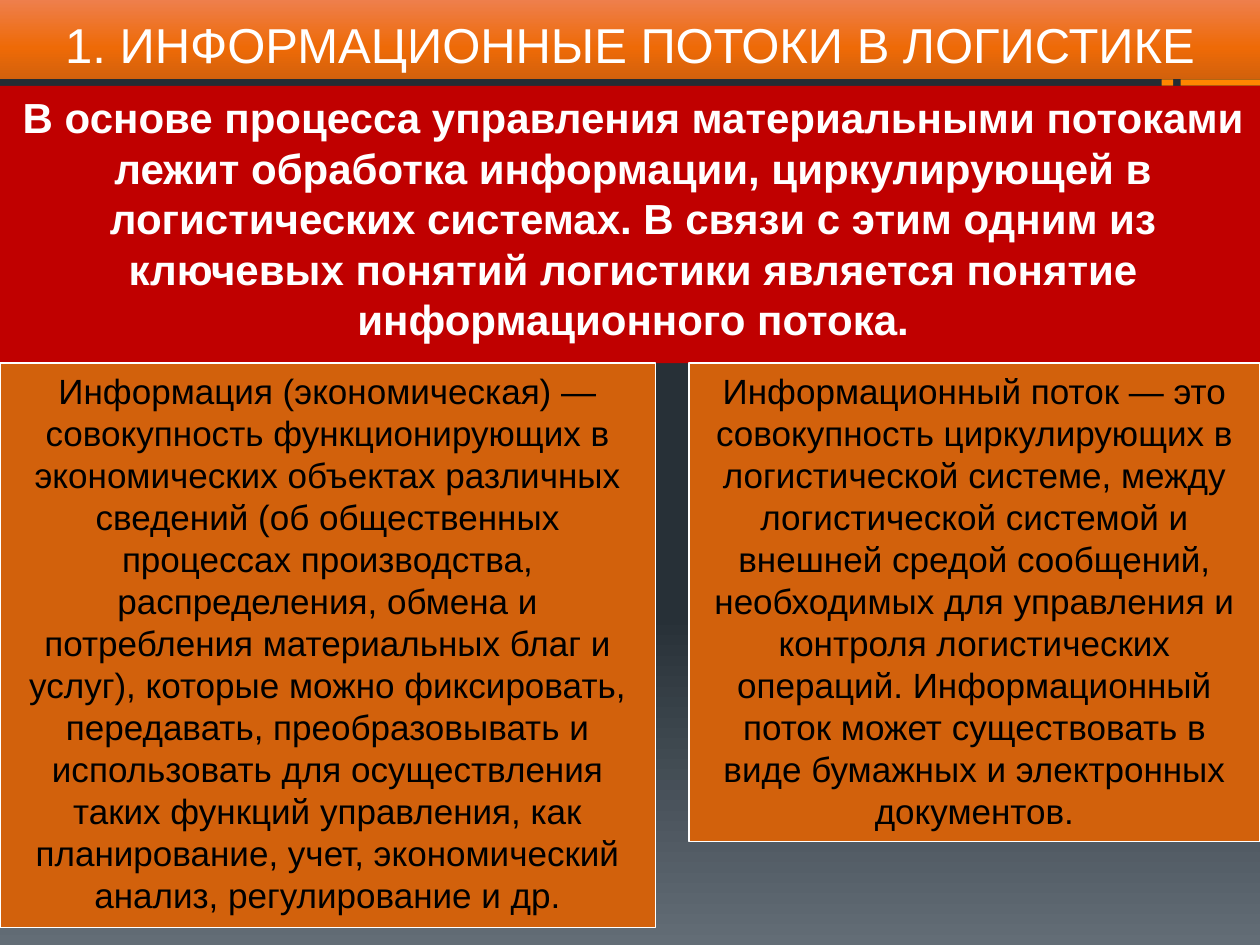
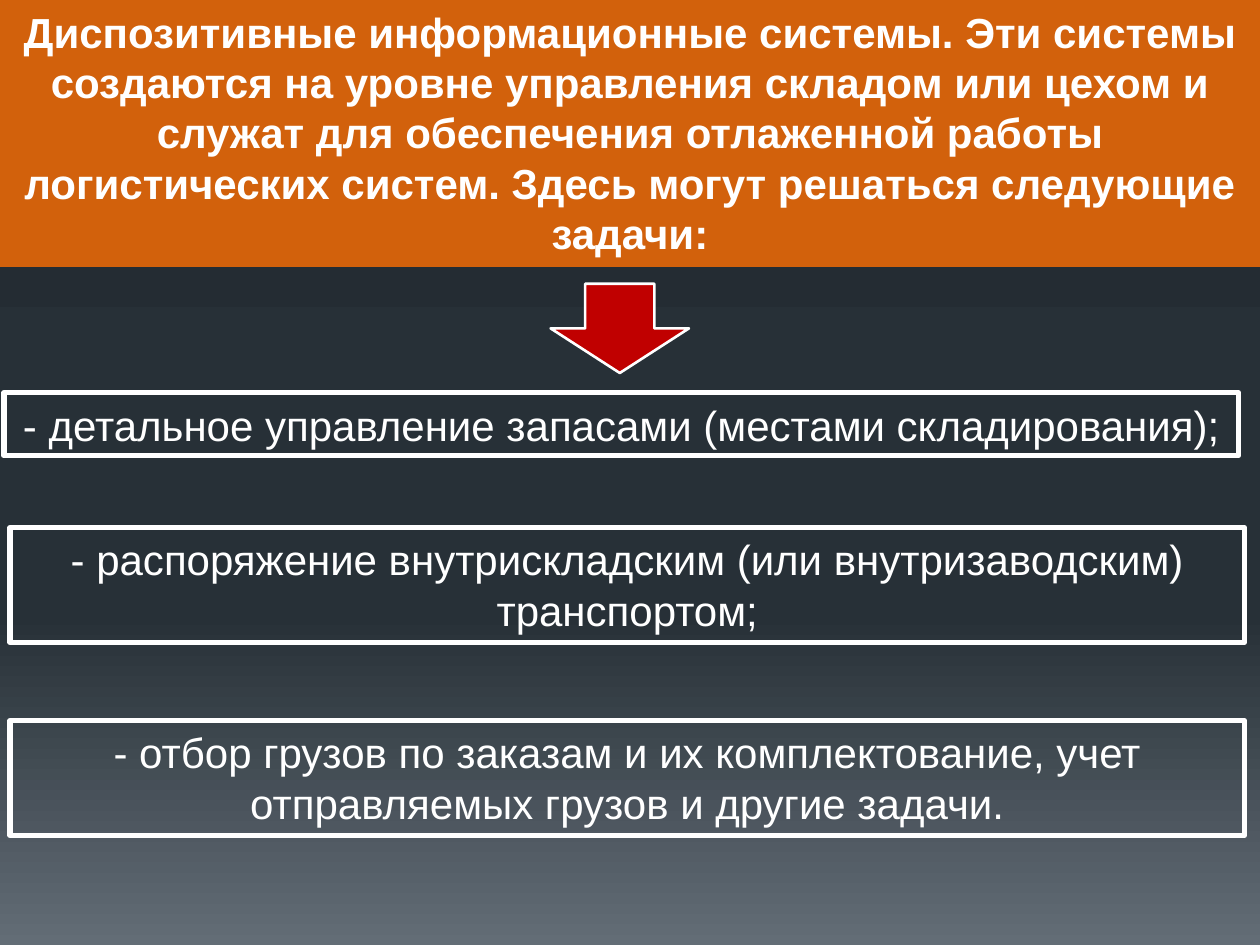
from copy import deepcopy

from pptx import Presentation
from pptx.dml.color import RGBColor
from pptx.enum.shapes import MSO_SHAPE
from pptx.enum.text import MSO_ANCHOR, MSO_AUTO_SIZE, PP_ALIGN
from pptx.oxml.ns import qn
from pptx.util import Cm, Pt

RECTANGLE = MSO_SHAPE.RECTANGLE
DOWN_ARROW = MSO_SHAPE.DOWN_ARROW
CENTER = PP_ALIGN.CENTER
BOTTOM = MSO_ANCHOR.BOTTOM
NO_AUTOFIT = MSO_AUTO_SIZE.NONE

FONT = "Arial"
WHITE = RGBColor(0xFF, 0xFF, 0xFF)
BLACK = RGBColor(0x00, 0x00, 0x00)
RED = RGBColor(0xC0, 0x00, 0x00)
ORANGE = RGBColor(0xD2, 0x61, 0x0C)
BRIGHT_ORANGE = RGBColor(0xFF, 0x86, 0x00)
BACKGROUND_STOPS = [
    (0, RGBColor(0x24, 0x2C, 0x33)),
    (0.65, RGBColor(0x27, 0x30, 0x37)),
    (1, RGBColor(0x63, 0x6D, 0x76)),
]
TITLE_STOPS = [
    (0, RGBColor(0xEE, 0x7F, 0x4C)),
    (0.6, RGBColor(0xEE, 0x6A, 0x07)),
    (1, ORANGE),
]

SLIDE_WIDTH = 25.4
SLIDE_HEIGHT = 19.05
TITLE_HEIGHT = 1.6


def set_gradient(fill, element, stops):
    """Fill from top to bottom with three stops; element holds the fill's XML."""
    fill.gradient()
    fill.gradient_angle = 270
    stop_list = element.find(".//" + qn("a:gsLst"))
    stop_list.append(deepcopy(stop_list[0]))
    for stop, (position, color) in zip(fill.gradient_stops, stops):
        stop.position = position
        stop.color.rgb = color


def add_text_panel(slide, box, text, size, color, bold=False, fill=None, line_width=None):
    """Add a centred text box; box is left, top, width, height in centimetres."""
    panel = slide.shapes.add_textbox(*[Cm(length) for length in box])
    if fill is not None:
        panel.fill.solid()
        panel.fill.fore_color.rgb = fill
    if line_width is not None:
        panel.line.color.rgb = WHITE
        panel.line.width = Pt(line_width)
    panel.text_frame.word_wrap = True
    paragraph = panel.text_frame.paragraphs[0]
    paragraph.alignment = CENTER
    run = paragraph.add_run()
    run.text = text
    run.font.name = FONT
    run.font.size = Pt(size)
    run.font.bold = bold
    run.font.color.rgb = color
    return panel


presentation = Presentation()
presentation.slide_width = Cm(SLIDE_WIDTH)
presentation.slide_height = Cm(SLIDE_HEIGHT)
master = presentation.slide_master
set_gradient(master.background.fill, master.element, BACKGROUND_STOPS)
title_only_layout = presentation.slide_layouts.get_by_name("Title Only")
blank_layout = presentation.slide_layouts.get_by_name("Blank")

# Slide 1: information flows
slide = presentation.slides.add_slide(title_only_layout)
title = slide.shapes.title
title.left, title.top = Cm(0), Cm(0)
title.width, title.height = Cm(SLIDE_WIDTH), Cm(TITLE_HEIGHT)
set_gradient(title.fill, title.element, TITLE_STOPS)
title.text_frame.auto_size = NO_AUTOFIT
title.text_frame.vertical_anchor = BOTTOM
paragraph = title.text_frame.paragraphs[0]
paragraph.alignment = CENTER
run = paragraph.add_run()
run.text = "1. ИНФОРМАЦИОННЫЕ ПОТОКИ В ЛОГИСТИКЕ"
run.font.name = FONT
run.font.size = Pt(28)
run.font.color.rgb = WHITE

statement_top = 1.73
for left, width in [(23.42, 0.23), (23.8, 1.6)]:
    mark = slide.shapes.add_shape(
        RECTANGLE, Cm(left), Cm(TITLE_HEIGHT), Cm(width), Cm(statement_top - TITLE_HEIGHT))
    mark.shadow.inherit = False
    mark.fill.solid()
    mark.fill.fore_color.rgb = BRIGHT_ORANGE
    mark.line.fill.background()

statement = add_text_panel(
    slide, (0, statement_top, SLIDE_WIDTH, 5.59),
    "В основе процесса управления материальными потоками лежит обработка информации, "
    "циркулирующей в логистических системах. В связи с этим одним из ключевых понятий "
    "логистики является понятие информационного потока.",
    24, WHITE, bold=True, fill=RED)
statement.text_frame.margin_left = Cm(0.38)

definitions = [
    (0, 13.21, 11.38,
     "Информация (экономическая) — совокупность функционирующих в экономических объектах "
     "различных сведений (об общественных процессах производства, распределения, обмена и "
     "потребления материальных благ и услуг), которые можно фиксировать, передавать, "
     "преобразовывать и использовать для осуществления таких функций управления, как "
     "планирование, учет, экономический анализ, регулирование и др."),
    (13.89, 11.51, 9.65,
     "Информационный поток — это совокупность циркулирующих в логистической системе, между "
     "логистической системой и внешней средой сообщений, необходимых для управления и "
     "контроля логистических операций. Информационный поток может существовать в виде "
     "бумажных и электронных документов."),
]
for left, width, height, text in definitions:
    add_text_panel(slide, (left, 7.32, width, height), text, 20, BLACK,
                   fill=ORANGE, line_width=0.75)

# Slide 2: dispositive systems and their tasks
slide = presentation.slides.add_slide(blank_layout)
add_text_panel(
    slide, (0, 0, SLIDE_WIDTH, 5.38),
    "Диспозитивные информационные системы. Эти системы создаются на уровне управления "
    "складом или цехом и служат для обеспечения отлаженной работы логистических систем. "
    "Здесь могут решаться следующие задачи:",
    24, WHITE, bold=True, fill=ORANGE)

tasks = [
    (0.08, 7.92, 1.27, "- детальное управление запасами (местами складирования);"),
    (0.2, 10.64, 2.31, "- распоряжение внутрискладским (или внутризаводским) транспортом;"),
    (0.2, 14.53, 2.31,
     "- отбор грузов по заказам и их комплектование, учет отправляемых грузов и другие задачи."),
]
for left, top, height, text in tasks:
    add_text_panel(slide, (left, top, 24.89, height), text, 24, WHITE, line_width=3)

arrow = slide.shapes.add_shape(DOWN_ARROW, Cm(11.1), Cm(5.72), Cm(2.79), Cm(1.8))
arrow.shadow.inherit = False
arrow.fill.solid()
arrow.fill.fore_color.rgb = RED
arrow.line.color.rgb = WHITE
arrow.line.width = Pt(1.5)

presentation.save("out.pptx")
